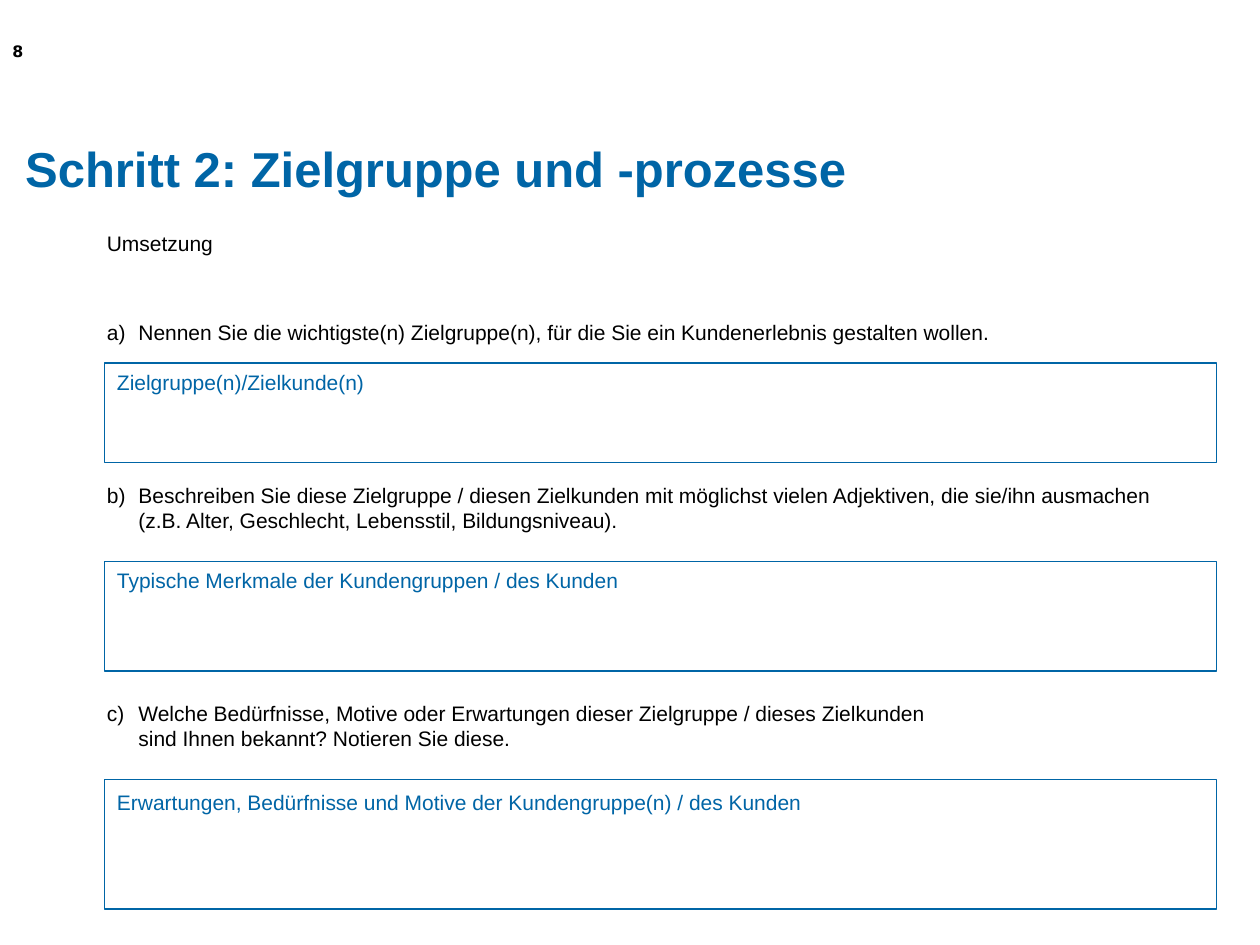
from dataclasses import dataclass

from lxml.etree import SubElement
from pptx import Presentation
from pptx.dml.color import RGBColor
from pptx.enum.shapes import MSO_SHAPE
from pptx.enum.text import MSO_ANCHOR, PP_ALIGN
from pptx.oxml.ns import qn
from pptx.util import Pt


@dataclass(frozen=True)
class Theme:
    blue: RGBColor = RGBColor(0x00, 0x65, 0xA6)
    black: RGBColor = RGBColor(0, 0, 0)
    font: str = "Arial"
    digit: str = "DejaVu Sans"
    head: int = 28
    body: int = 12
    small: int = 9
    line: float = 0.75


THEME = Theme()
LEFT = 54
FRAME = 59.75
WIDE = 635.5

# question, its top and height, answer label, label offset, answer top and height
TASKS = [
    ("Nennen Sie die wichtigste(n) Zielgruppe(n), für die Sie ein "
     "Kundenerlebnis gestalten wollen.", 179.3, 21.6,
     "Zielgruppe(n)/Zielkunde(n)", 0, 207.5, 56.8),
    ("Beschreiben Sie diese Zielgruppe / diesen Zielkunden mit möglichst "
     "vielen Adjektiven, die sie/ihn ausmachen \v"
     "(z.B. Alter, Geschlecht, Lebensstil, Bildungsniveau).", 272.3, 36,
     "Typische Merkmale der Kundengruppen / des Kunden", 0, 321, 62.5),
    ("Welche Bedürfnisse, Motive oder Erwartungen dieser Zielgruppe / "
     "dieses Zielkunden \vsind Ihnen bekannt? Notieren Sie diese.", 396.8, 36,
     "Erwartungen, Bedürfnisse und Motive der Kundengruppe(n) / des Kunden",
     2.3, 445.6, 73.8),
]


def style(para, size, color, name=THEME.font, bold=False):
    for run in para.runs:
        font = run.font
        font.size, font.name, font.bold = Pt(size), name, bold
        font.color.rgb = color


def add_text(slide, box, text, size=THEME.body, color=THEME.black, **look):
    frame = slide.shapes.add_textbox(*map(Pt, box)).text_frame
    frame.word_wrap = True
    frame.text = text
    para = frame.paragraphs[0]
    style(para, size, color, **look)
    return para


def add_title(slide, box, text):
    title = slide.shapes.title
    title.left, title.top, title.width, title.height = map(Pt, box)
    frame = title.text_frame
    frame.margin_left = frame.margin_right = 0
    frame.margin_top = frame.margin_bottom = 0
    frame.vertical_anchor = MSO_ANCHOR.MIDDLE
    frame.text = text
    para = frame.paragraphs[0]
    para.alignment = PP_ALIGN.LEFT
    style(para, THEME.head, THEME.blue, bold=True)


def add_task(slide, box, text, number):
    """Add a question lettered a), b), c) with a hanging indent."""
    para = add_text(slide, box, text)
    props = para._p.get_or_add_pPr()
    props.set("marL", str(Pt(18)))
    props.set("indent", str(Pt(-18)))
    SubElement(props, qn("a:buFont"), typeface=THEME.font)
    SubElement(props, qn("a:buAutoNum"), type="alphaLcParenR",
               startAt=str(number))


def add_answer(slide, box, label, shift):
    """Add an outlined field with its label at the top left."""
    field = slide.shapes.add_shape(MSO_SHAPE.RECTANGLE, *map(Pt, box))
    field.shadow.inherit = False
    field.fill.background()
    field.line.color.rgb = THEME.blue
    field.line.width = Pt(THEME.line)
    left, top, width, _ = box
    add_text(slide, (left, top + shift, width, 21.6), label, color=THEME.blue)


def main():
    deck = Presentation()
    deck.slide_width, deck.slide_height = Pt(720), Pt(540)
    slide = deck.slides.add_slide(deck.slide_layouts[5])
    add_title(slide, (14.4, 75.6, 692, 41), "Schritt 2: Zielgruppe und -prozesse")
    add_text(slide, (0, 20.2, 57, 33.8), "8", THEME.small,
             name=THEME.digit, bold=True)
    add_text(slide, (LEFT, 128.2, 80, 21.6), "Umsetzung")
    for number, task in enumerate(TASKS, 1):
        text, top, height, label, shift, start, depth = task
        add_task(slide, (LEFT, top, 660, height), text, number)
        add_answer(slide, (FRAME, start, WIDE, depth), label, shift)
    deck.save("out.pptx")


if __name__ == "__main__":
    main()
